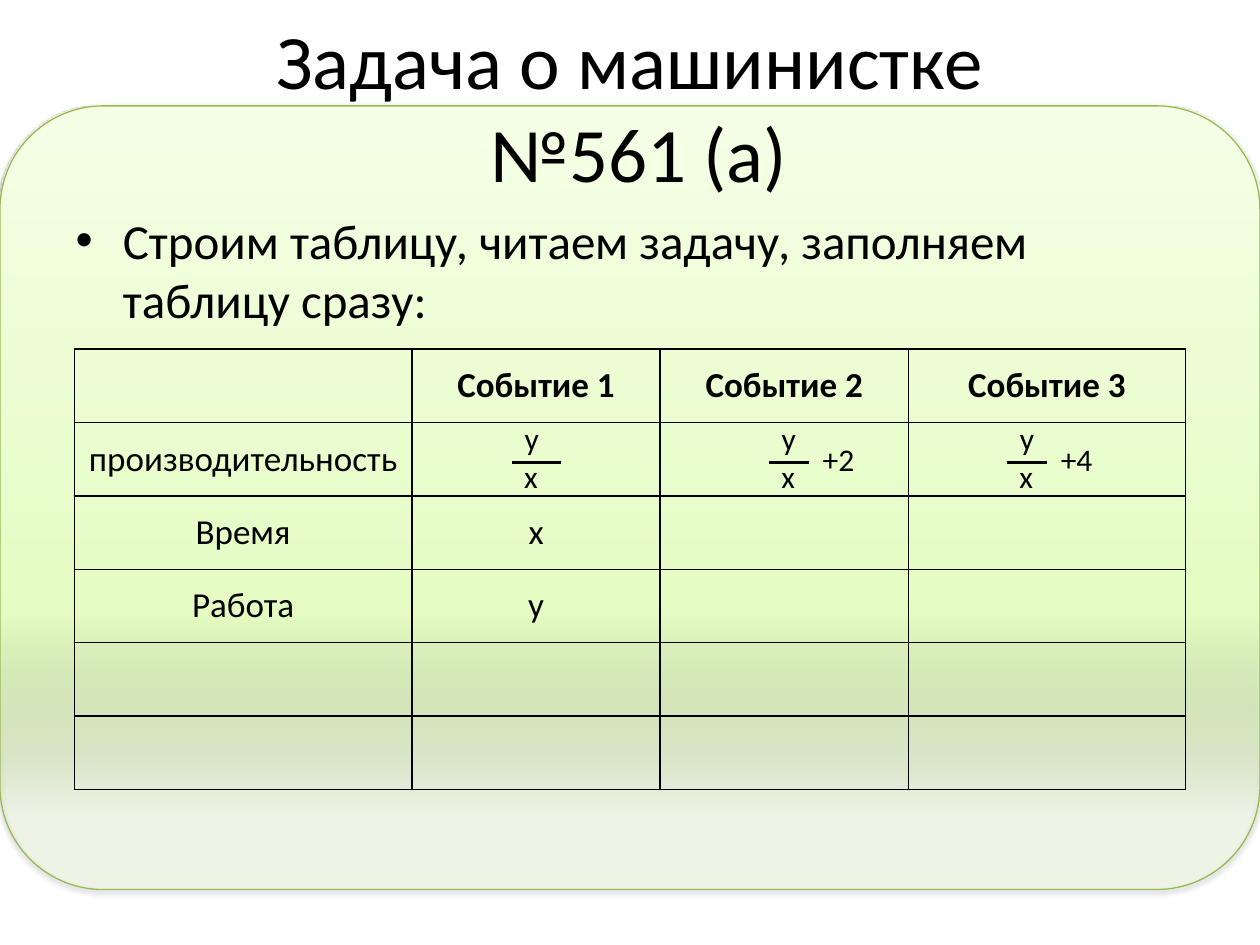
from dataclasses import dataclass

from lxml.etree import SubElement
from pptx import Presentation
from pptx.dml.color import RGBColor
from pptx.enum.shapes import MSO_CONNECTOR as Connector, MSO_SHAPE as Preset
from pptx.enum.text import MSO_ANCHOR as Anchor, MSO_AUTO_SIZE as AutoSize, PP_ALIGN as Align
from pptx.oxml.ns import qn
from pptx.util import Inches, Pt


@dataclass(frozen=True)
class Theme:
    font: str = "Calibri"
    ink: str = "000000"
    edge: str = "98B955"
    gradient: tuple = ((10, "DAFDA7", 14), (35, "E4FCC2", 100), (100, "F5FFE7", 100))
    title: int = 44
    body: int = 28
    table: int = 20
    formula: int = 18


def apply(target, **formats):
    for name, value in formats.items():
        setattr(target, name, value)


def add_color(parent, color, alpha=100):
    node = SubElement(parent, qn("a:srgbClr"), val=color)
    if alpha < 100:
        SubElement(node, qn("a:alpha"), val=str(alpha * 1000))


class SlideBuilder:
    """Draws styled elements on a slide measured as 100 columns by 75 rows."""

    def __init__(self, presentation, theme):
        self.theme = theme
        self.column = presentation.slide_width / 100
        self.row = presentation.slide_height / 75
        self.slide = presentation.slides.add_slide(presentation.slide_layouts[1])
        self.shapes = self.slide.shapes

    def box(self, left, top, width, height):
        return (round(left * self.column), round(top * self.row),
                round(width * self.column), round(height * self.row))

    def set_text(self, frame, text, size, bold=False, align=Align.CENTER):
        frame.text = text
        for paragraph in frame.paragraphs:
            paragraph.alignment = align
            for run in paragraph.runs:
                apply(run.font, name=self.theme.font, size=Pt(size), bold=bold)
                run.font.color.rgb = RGBColor.from_string(self.theme.ink)

    def placeholder(self, index, area, text, size, align, anchor):
        shape = self.slide.placeholders[index]
        apply(shape, **dict(zip(("left", "top", "width", "height"), self.box(*area))))
        self.set_text(shape.text_frame, text, size, align=align)
        apply(shape.text_frame, auto_size=AutoSize.NONE, vertical_anchor=anchor)

    def panel(self, area, rounding):
        shape = self.shapes.add_shape(Preset.ROUNDED_RECTANGLE, *self.box(*area))
        shape.adjustments[0] = rounding
        shape.fill.gradient()
        shape.fill.gradient_angle = 90
        shape.line.color.rgb = RGBColor.from_string(self.theme.edge)
        shape.line.width = Pt(0.75)
        shape.shadow.inherit = False
        properties = shape._element.spPr
        stops = properties.find(".//" + qn("a:gsLst"))
        stops.clear()
        for position, color, alpha in self.theme.gradient:
            add_color(SubElement(stops, qn("a:gs"), pos=str(position * 1000)), color, alpha)
        shadow = SubElement(properties.find(qn("a:effectLst")), qn("a:outerShdw"),
                            blurRad=str(Pt(3.1)), dist=str(Pt(1.6)), dir="5400000", rotWithShape="0")
        add_color(shadow, self.theme.ink, 38)
        self.shapes._spTree.insert(2, shape._element)

    def borders(self, cell):
        properties = cell._tc.get_or_add_tcPr()
        for side in ("lnL", "lnR", "lnT", "lnB"):
            line = SubElement(properties, qn(f"a:{side}"), w=str(Pt(1)))
            add_color(SubElement(line, qn("a:solidFill")), self.theme.ink)

    def table(self, left, top, widths, row_height, rows):
        area = self.box(left, top, sum(widths), row_height * len(rows))
        table = self.shapes.add_table(len(rows), len(widths), *area).table
        apply(table, first_row=False, horz_banding=False)
        for column, width in zip(table.columns, widths):
            column.width = round(width * self.column)
        for row_index, row in enumerate(rows):
            for column_index, text in enumerate(row):
                cell = table.cell(row_index, column_index)
                self.borders(cell)
                cell.fill.background()
                cell.vertical_anchor = Anchor.MIDDLE
                if text:
                    self.set_text(cell.text_frame, text, self.theme.table, bold=row_index == 0)

    def label(self, left, top, width, text, wrap):
        shape = self.shapes.add_textbox(*self.box(left, top, width, 4))
        self.set_text(shape.text_frame, text, self.theme.formula)
        apply(shape.text_frame, word_wrap=wrap, auto_size=AutoSize.SHAPE_TO_FIT_TEXT)

    def bar(self, left, top, width):
        x, y, length, _ = self.box(left, top, width, 0)
        line = self.shapes.add_connector(Connector.STRAIGHT, x, y, x + length, y)
        line.line.color.rgb = RGBColor.from_string(self.theme.ink)
        line.line.width = Pt(1.5)
        SubElement(line._element.spPr, qn("a:effectLst"))

    def fraction(self, left, bar_width, addend):
        self.label(left, 32.8, 3.2, "у", False)
        self.label(left, 35.8, 3.1, "х", False)
        self.bar(left, 36.7, bar_width)
        if addend:
            self.label(left + 3.2, 34.4, 4.7, addend, True)


def main():
    presentation = Presentation()
    apply(presentation, slide_width=Inches(10), slide_height=Inches(7.5))
    theme = Theme()
    builder = SlideBuilder(presentation, theme)
    builder.panel((0, 8.4, 100, 62.2), 0.132)
    builder.placeholder(1, (5, 16.2, 90, 49.5), "Строим таблицу, читаем задачу, заполняем таблицу сразу:",
                        theme.body, Align.LEFT, Anchor.TOP)
    builder.placeholder(0, (5.7, -0.3, 90, 17.3), "Задача о машинистке \v№561 (а)",
                        theme.title, Align.CENTER, Anchor.MIDDLE)
    empty = ("",) * 4
    builder.table(5.9, 27.7, (26.8, 19.7, 19.7, 22), 5.83, (
        ("", "Событие 1", "Событие 2", "Событие 3"),
        ("производительность", "", "", ""),
        ("Время", "х", "", ""),
        ("Работа", "у", "", ""),
        empty,
        empty,
    ))
    for left, bar_width, addend in ((40.6, 3.9, ""), (61, 3.2, "+2"), (79.9, 3.2, "+4")):
        builder.fraction(left, bar_width, addend)
    presentation.save("out.pptx")


if __name__ == "__main__":
    main()
